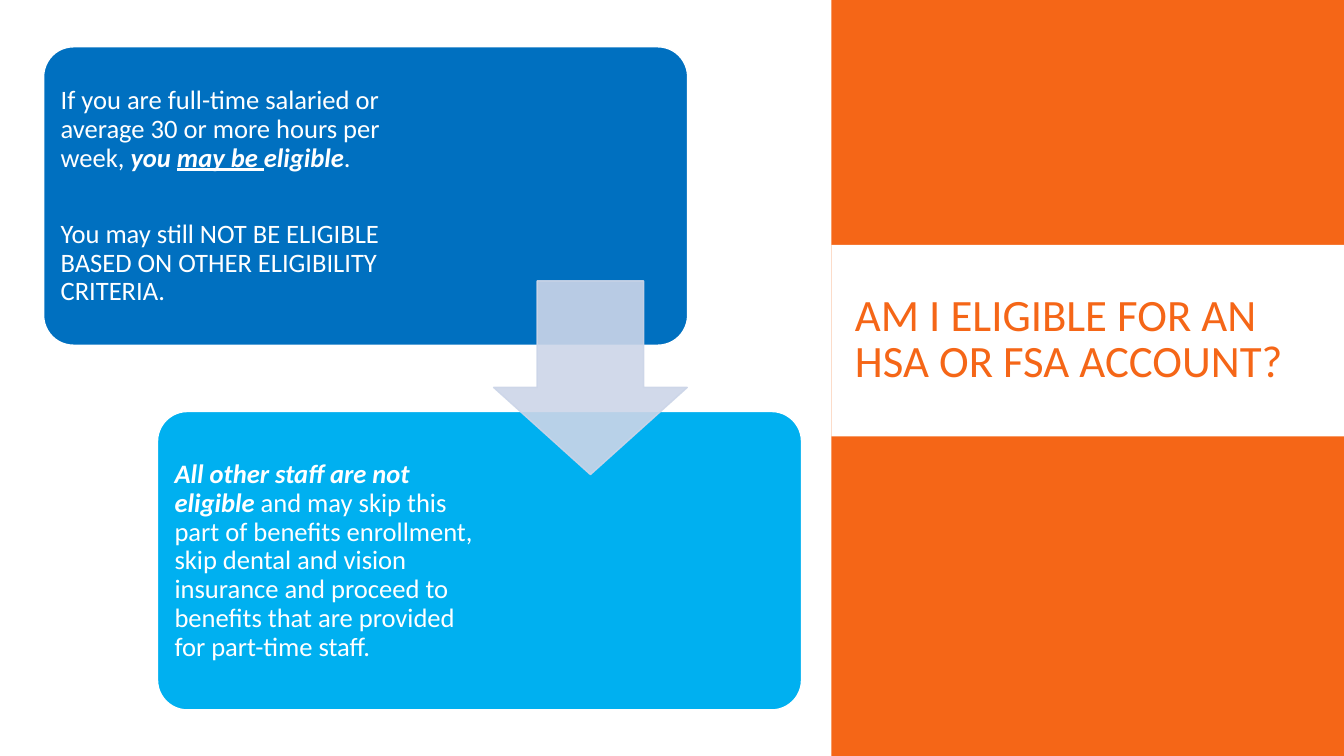
from lxml import etree
from pptx import Presentation
from pptx import util as u
from pptx.dml.color import RGBColor
from pptx.enum import shapes, text
from pptx.oxml.ns import qn

Cm, Pt = u.Cm, u.Pt
SHAPE = shapes.MSO_SHAPE
FONT = "Calibri"
COLORS = {
    "orange": "F56617",
    "white": "FFFFFF",
    "blue": "0070C0",
    "sky": "00B0F0",
    "mist": "CCD5E8",
}
ELIGIBLE = [
    [
        ("If you are full-time salaried or average 30 or more hours per week, ", ""),
        ("you ", "bi"),
        ("may be ", "biu"),
        ("eligible", "bi"),
        (".", ""),
    ],
    [("You may still NOT BE ELIGIBLE BASED ON OTHER ELIGIBILITY CRITERIA.", "")],
]
NOT_ELIGIBLE = [
    [
        ("All other staff are not eligible", "bi"),
        (
            " and may skip this part of benefits enrollment, skip dental and vision "
            "insurance and proceed to benefits that are provided for part-time staff.",
            "",
        ),
    ],
]


def color(name):
    """Return the named colour."""
    return RGBColor.from_string(COLORS[name])


def add_block(s, kind, box, fill, line=None, adjust=()):
    """Add a filled preset shape, outlined if a line colour is given."""
    sp = s.shapes.add_shape(kind, *map(Cm, box))
    sp.shadow.inherit = False
    sp.fill.solid()
    sp.fill.fore_color.rgb = color(fill)
    if line:
        sp.line.color.rgb = color(line)
        sp.line.width = Pt(1)
    else:
        sp.line.fill.background()
    for i, value in enumerate(adjust):
        sp.adjustments[i] = value
    return sp


def add_card(s, left, top, fill, text_width, paragraphs):
    """Add a rounded card with a narrow text column on its left."""
    add_block(s, SHAPE.ROUNDED_RECTANGLE, (left, top, 16.23, 7.52), fill, "white", [0.1])
    box = s.shapes.add_textbox(Cm(left + 0.23), Cm(top + 0.23), Cm(text_width), Cm(7.09))
    tf = box.text_frame
    tf.word_wrap = True
    tf.vertical_anchor = text.MSO_ANCHOR.MIDDLE
    tf.margin_left = tf.margin_right = tf.margin_top = tf.margin_bottom = Cm(0.2)
    for i, runs in enumerate(paragraphs):
        p = tf.add_paragraph() if i else tf.paragraphs[0]
        p.line_spacing = 0.9
        p.space_before = Pt(34 if i else 0)
        p.font.name, p.font.size = FONT, Pt(19)
        p.font.color.rgb = color("white")
        for words, style in runs:
            r = p.add_run()
            r.text = words
            r.font.name, r.font.size = FONT, Pt(19)
            r.font.color.rgb = color("white")
            r.font.bold = "b" in style
            r.font.italic = "i" in style
            r.font.underline = "u" in style


def add_arrow(s, box):
    """Add the slightly transparent arrow that links the cards."""
    sp = add_block(s, SHAPE.DOWN_ARROW, box, "mist", "mist", [0.55, 0.45])
    for clr in sp._element.spPr.iter(qn("a:srgbClr")):
        etree.SubElement(clr, qn("a:alpha"), val="90000")


def place_title(s, words, box):
    """Format the title placeholder and bring it in front of the panel."""
    sp = s.shapes.title
    sp.left, sp.top, sp.width, sp.height = map(Cm, box)
    tf = sp.text_frame
    tf.text = words
    tf.word_wrap = True
    tf.vertical_anchor = text.MSO_ANCHOR.MIDDLE
    p = tf.paragraphs[0]
    p.alignment = text.PP_ALIGN.LEFT
    p.line_spacing = 0.85
    p.font.name, p.font.size = FONT, Pt(32)
    p.font.color.rgb = color("orange")
    s.shapes._spTree.append(sp._element)


def main():
    """Build the eligibility slide."""
    prs = Presentation()
    prs.slide_width, prs.slide_height = Cm(33.87), Cm(19.05)
    s = prs.slides.add_slide(prs.slide_layouts[5])
    add_block(s, SHAPE.RECTANGLE, (20.95, 0, 12.92, 19.05), "orange")
    add_block(s, SHAPE.RECTANGLE, (20.95, 6.17, 12.92, 4.83), "white")
    place_title(s, "AM I ELIGIBLE FOR AN HSA OR FSA ACCOUNT?", (21.29, 6.5, 11.48, 4.19))
    add_card(s, 1.1, 1.18, "blue", 8.46, ELIGIBLE)
    add_card(s, 3.97, 10.37, "sky", 8.03, NOT_ELIGIBLE)
    add_arrow(s, (12.44, 7.08, 4.88, 4.88))
    prs.save("out.pptx")


if __name__ == "__main__":
    main()
